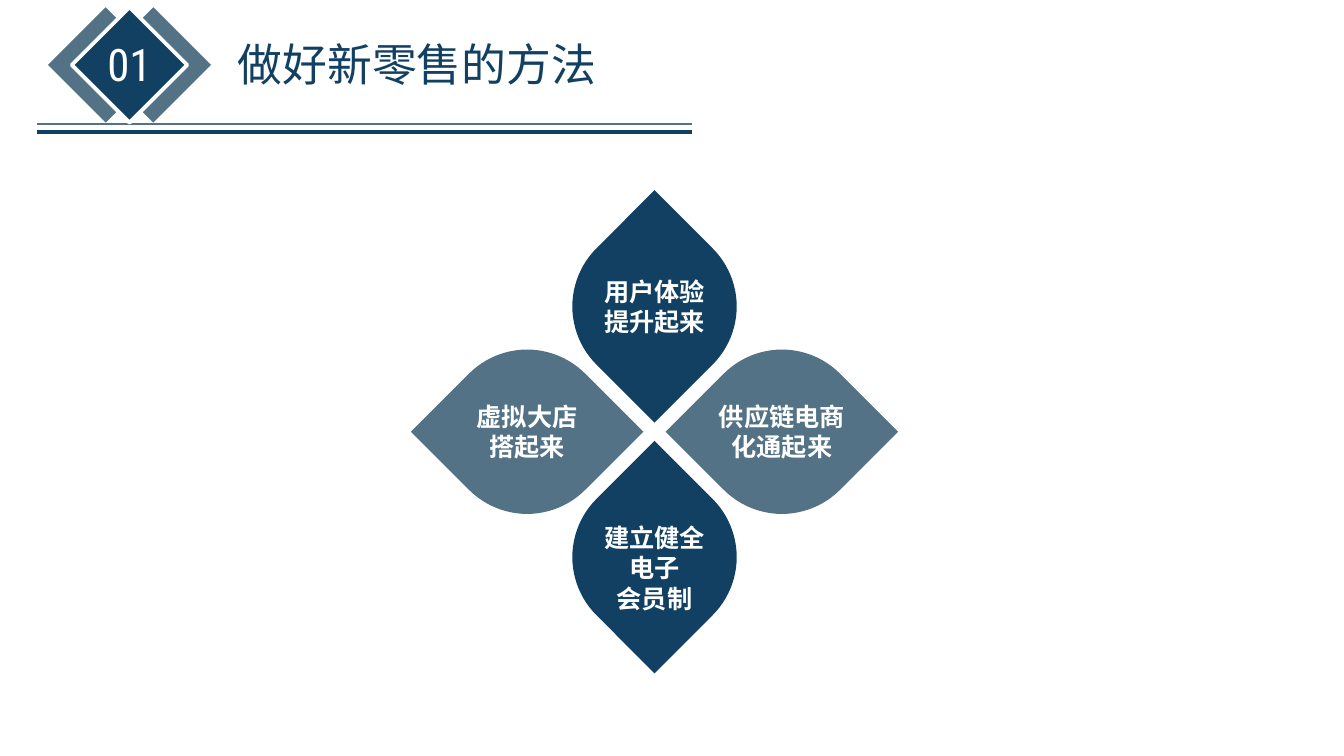
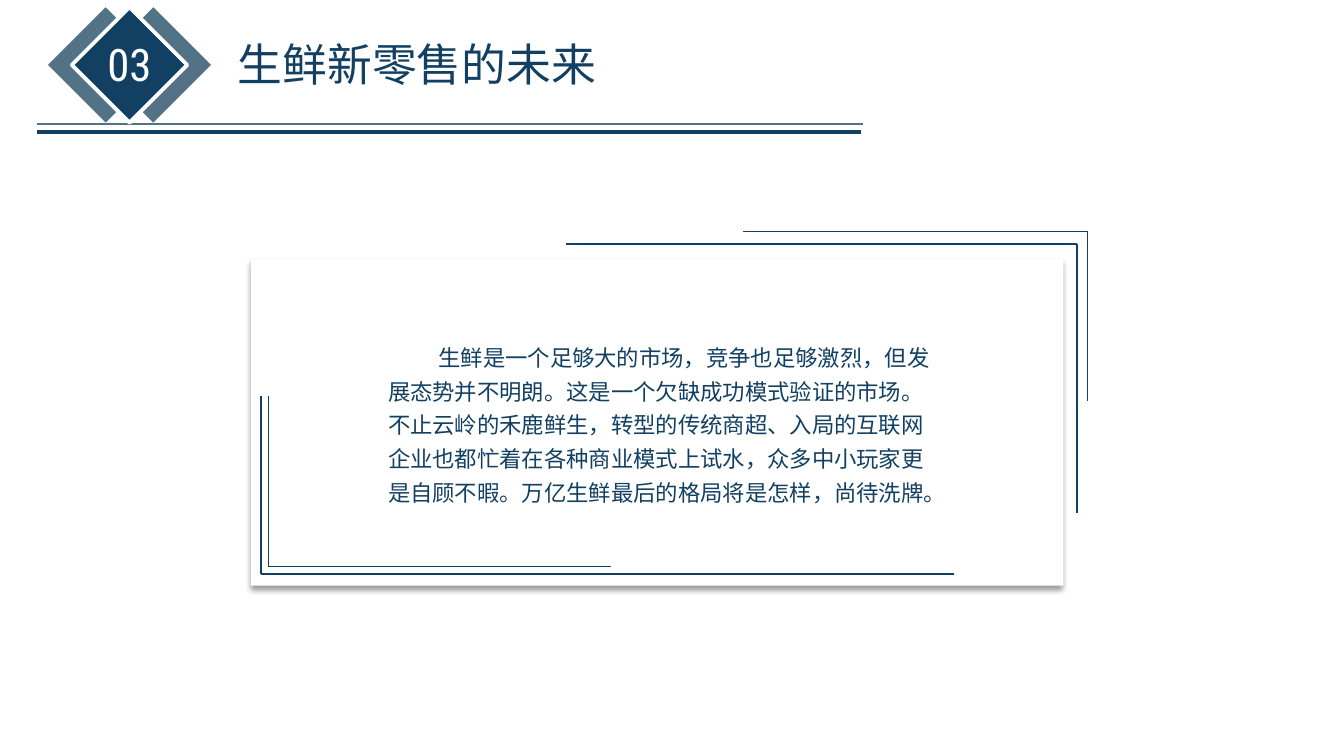
import pptx
import pptx.util
import pptx.dml.color
import pptx.enum.shapes
import pptx.enum.text
import pptx.oxml
import pptx.oxml.ns
from lxml import etree

Pt = pptx.util.Pt
SHAPE = pptx.enum.shapes.MSO_SHAPE
ALIGN = pptx.enum.text.PP_ALIGN

# Shared look
COLORS = {"navy": "124062", "slate": "537285", "white": "FFFFFF", "black": "000000"}
CJK, NUMERAL = "Noto Sans CJK SC", "Roboto Condensed"

# Content: header (number, title, ends of the thin and thick rules)
METHODS_HEADER = ("01", "做好新零售的方法", 494.6, 494.6)
FUTURE_HEADER = ("03", "生鲜新零售的未来", 616.3, 614.9)

# Petal: x and y direction from the centre, colour, text width, text drop, rows, text
PETALS = [
    (0, -1, "navy", 96.5, 0, 2, ["用户体验提升起来"]),
    (1, 0, "slate", 105.8, 0, 2, ["供应链电商化通起来"]),
    (-1, 0, "slate", 96.5, 0, 2, ["虚拟大店搭起来"]),
    (0, 1, "navy", 96.5, 8, 3, ["建立健全电子", "会员制"]),
]
FUTURE_TEXT = (
    "生鲜是一个足够大的市场，竞争也足够激烈，但发展态势并不明朗。"
    "这是一个欠缺成功模式验证的市场。不止云岭的禾鹿鲜生，转型的传统商超、"
    "入局的互联网企业也都忙着在各种商业模式上试水，众多中小玩家更是自顾不暇。"
    "万亿生鲜最后的格局将是怎样，尚待洗牌。"
)
# Corner brackets: corner x, corner y, far x, far y, line width
TOP_BRACKETS = [(769.2, 174.2, 404.6, 366.5, 1.5), (776.9, 165.2, 530.6, 286.6, 0.5)]
BOTTOM_BRACKETS = [(186.4, 410.1, 681.8, 283, 1.5), (191.6, 404.6, 436.3, 283, 0.5)]


def rgb(name):
    return pptx.dml.color.RGBColor.from_string(COLORS[name])


def add_line(shapes, x1, y1, x2, y2, color, width):
    line = shapes.add_connector(
        pptx.enum.shapes.MSO_CONNECTOR.STRAIGHT, Pt(x1), Pt(y1), Pt(x2), Pt(y2))
    line.line.color.rgb = rgb(color)
    line.line.width = Pt(width)
    etree.SubElement(line._element.spPr, pptx.oxml.ns.qn("a:effectLst"))


def add_block(shapes, kind, x, y, w, h, color, rotation=0, adjust=None):
    sp = shapes.add_shape(kind, Pt(x), Pt(y), Pt(w), Pt(h))
    sp.shadow.inherit = False
    sp.fill.solid()
    sp.fill.fore_color.rgb = rgb(color)
    sp.line.fill.background()
    sp.rotation = rotation
    if adjust is not None:
        sp.adjustments[0] = adjust
    return sp


def add_text(shapes, x, y, w, h, paragraphs, size, color,
             font=CJK, bold=False, align=ALIGN.LEFT):
    tf = shapes.add_textbox(Pt(x), Pt(y), Pt(w), Pt(h)).text_frame
    tf.word_wrap = True
    for i, text in enumerate(paragraphs):
        p = tf.paragraphs[0] if i == 0 else tf.add_paragraph()
        p.alignment = align
        r = p.add_run()
        r.text = text
        r.font.size = Pt(size)
        r.font.bold = bold
        r.font.color.rgb = rgb(color)
        r.font.name = font
        ea = etree.SubElement(r._r.get_or_add_rPr(), pptx.oxml.ns.qn("a:ea"))
        ea.set("typeface", font)
    return tf


def add_header(s, number, title, thin_end, thick_end):
    shapes = s.shapes.add_group_shape().shapes
    left, cx, cy, side = 26.6, 92.5, 46.4, 58.3
    add_line(shapes, left, 88.6, thin_end, 88.6, "slate", 1)
    # Overlapping diamonds, the navy one in front
    for dx, color in [(17, "slate"), (-17, "slate"), (0, "navy")]:
        diamond = add_block(shapes, SHAPE.RECTANGLE, cx + dx - side / 2, cy - side / 2,
                            side, side, color, rotation=45)
    diamond.line.color.rgb = rgb("white")
    diamond.line.width = Pt(2.75)
    add_text(shapes, cx - 24, 23, 48, 46, [number], 32, "white", NUMERAL, align=ALIGN.CENTER)
    add_line(shapes, left, 94.3, thick_end, 94.3, "navy", 3)
    add_text(shapes, 162.7, 23, 328, 46, [title], 32, "navy")


def add_shadow(sp):
    effects = sp._element.spPr.find(pptx.oxml.ns.qn("a:effectLst"))
    effects.append(pptx.oxml.parse_xml(
        f'<a:outerShdw {pptx.oxml.ns.nsdecls("a")} blurRad="{Pt(4)}" dist="{Pt(3)}" '
        f'dir="5400000" algn="t" rotWithShape="0"><a:srgbClr val="{COLORS["black"]}">'
        '<a:alpha val="40000"/></a:srgbClr></a:outerShdw>'))


def build_methods(s):
    add_header(s, *METHODS_HEADER)
    cx, cy, reach_x, reach_y, side = 467.5, 308.4, 91, 89.5, 117.4
    placed = [(cx + dx * reach_x, cy + dy * reach_y, dx, *rest)
              for dx, dy, *rest in PETALS]
    # Petals: squares with two opposite round corners, standing on a tip
    for x, y, dx, color, *_ in placed:
        add_block(s.shapes, SHAPE.ROUND_2_DIAG_RECTANGLE, x - side / 2, y - side / 2,
                  side, side, color, rotation=45 if dx else 135, adjust=0.5)
    # Petal labels
    for x, y, _, _, w, drop, rows, text in placed:
        h = 7.2 + 21.8 * rows
        add_text(s.shapes, x - w / 2, y + drop - h / 2, w, h, text, 18, "white",
                 bold=True, align=ALIGN.CENTER)


def add_brackets(s, brackets):
    for x, y, far_x, far_y, width in brackets:
        add_line(s.shapes, x, y, far_x, y, "navy", width)
        add_line(s.shapes, x, y, x, far_y, "navy", width)


def build_future(s):
    add_header(s, *FUTURE_HEADER)
    add_brackets(s, TOP_BRACKETS)
    card = add_block(s.shapes, SHAPE.RECTANGLE, 179.3, 185, 580.3, 233.3, "white")
    add_shadow(card)
    add_brackets(s, BOTTOM_BRACKETS)
    # Paragraph with an indented first line
    tf = add_text(s.shapes, 277.2, 241.2, 393.8, 121, [FUTURE_TEXT], 16, "navy")
    tf.margin_left = tf.margin_right = tf.margin_top = tf.margin_bottom = 0
    p = tf.paragraphs[0]
    p.line_spacing = 1.25
    pPr = p._p.get_or_add_pPr()
    pPr.set("marL", "0")
    pPr.set("indent", str(Pt(36)))


def main():
    prs = pptx.Presentation()
    prs.slide_width, prs.slide_height = Pt(960), Pt(540)
    for build in (build_methods, build_future):
        build(prs.slides.add_slide(prs.slide_layouts[6]))
    prs.save("out.pptx")


if __name__ == "__main__":
    main()
